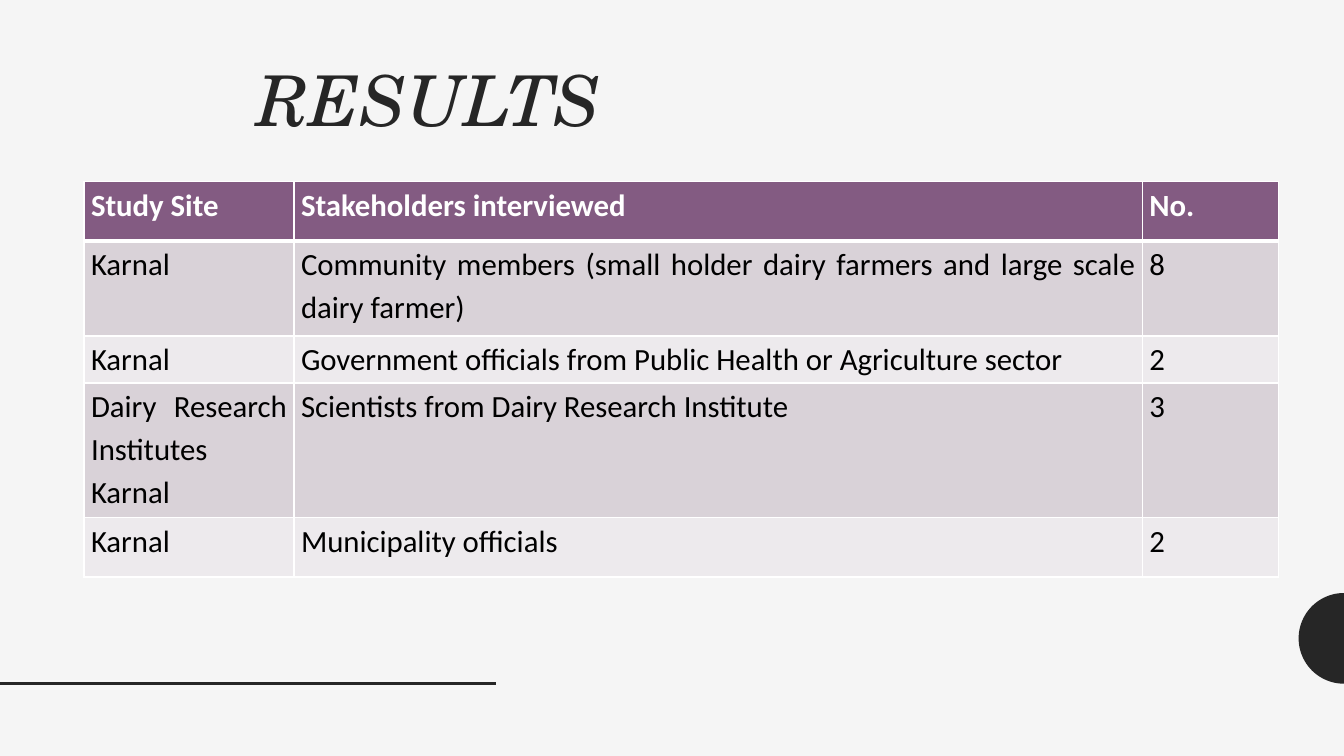
from math import cos, pi, sin

from lxml import etree
from pptx import Presentation
from pptx.dml.color import RGBColor
from pptx.enum.text import MSO_ANCHOR, PP_ALIGN
from pptx.oxml.ns import qn
from pptx.util import Inches, Pt

TOP = MSO_ANCHOR.TOP
RIGHT, JUSTIFY = PP_ALIGN.RIGHT, PP_ALIGN.JUSTIFY

PAPER = RGBColor(0xF5, 0xF5, 0xF5)
INK = RGBColor(0x26, 0x26, 0x26)
PLUM = RGBColor(0x83, 0x5B, 0x82)
MAUVE = RGBColor(0xD9, 0xD2, 0xD8)
MIST = RGBColor(0xED, 0xEA, 0xED)
WHITE = RGBColor(0xFF, 0xFF, 0xFF)
BLACK = RGBColor(0, 0, 0)

COLS, ROWS = 160, 90
UNIT = Inches(1) / 12

TITLE = dict(name="TeX Gyre Schola", size=Pt(50), italic=True, bold=False, color=INK)
HEAD = dict(name="Calibri", size=Pt(22), bold=True, color=WHITE)
BODY = {**HEAD, "bold": False, "color": BLACK}

COL_WIDTHS = [25, 101, 16.2]
ROW_HEIGHTS = [7.1, 11.3, 5.6, 16, 7.1]
INTERVIEWS = [
    ("Study Site", "Stakeholders interviewed", "No."),
    ("Karnal", "Community members (small holder dairy farmers and "
     "large scale dairy farmer)", "8"),
    ("Karnal", "Government officials from Public Health or Agriculture sector", "2"),
    ("Dairy Research Institutes Karnal", "Scientists from Dairy Research Institute", "3"),
    ("Karnal", "Municipality officials", "2"),
]


def grid(n):
    return round(n * UNIT)


class Deck:
    """Draws styled elements on the current slide, placed in grid columns and rows."""

    def __init__(self):
        self.prs = Presentation()
        self.prs.slide_width, self.prs.slide_height = grid(COLS), grid(ROWS)

    def new_slide(self):
        self.s = self.prs.slides.add_slide(self.prs.slide_layouts[5])
        fill = self.s.background.fill
        fill.solid()
        fill.fore_color.rgb = PAPER

    def text(self, tf, words, style, align, spacing):
        p = tf.paragraphs[0]
        p.alignment, p.line_spacing = align, spacing
        r = p.add_run()
        r.text = words
        for key, value in style.items():
            if key == "color":
                r.font.color.rgb = value
            else:
                setattr(r.font, key, value)

    def title(self, words, left, top, width, height):
        sp = self.s.shapes.title
        box = dict(left=left, top=top, width=width, height=height)
        for key, value in box.items():
            setattr(sp, key, grid(value))
        sp.text_frame.vertical_anchor = TOP
        self.text(sp.text_frame, words, TITLE, RIGHT, 0.9)

    def line(self, x1, x2, y):
        cx = self.s.shapes.add_connector(1, grid(x1), grid(y), grid(x2), grid(y))
        cx.line.color.rgb, cx.line.width = INK, Pt(2)
        etree.SubElement(cx._element.spPr, qn("a:effectLst"))

    def half_disc(self, x, y, radius, steps=48):
        arc = [(grid(x - radius * sin(pi * i / steps)),
                grid(y - radius * cos(pi * i / steps))) for i in range(steps + 1)]
        fb = self.s.shapes.build_freeform(*arc[0])
        fb.add_line_segments(arc[1:], close=True)
        sp = fb.convert_to_shape()
        sp.shadow.inherit = False
        sp.fill.solid()
        sp.fill.fore_color.rgb = INK
        sp.line.fill.background()

    def borders(self, cell, **widths):
        tc_pr = cell._tc.get_or_add_tcPr()
        for i, side in enumerate("LRTB"):
            ln = etree.Element(qn(f"a:ln{side}"), w=str(Pt(widths.get(side, 1))))
            fill = etree.SubElement(ln, qn("a:solidFill"))
            etree.SubElement(fill, qn("a:srgbClr"), val=str(WHITE))
            tc_pr.insert(i, ln)

    def table(self, data, left, top, widths, heights):
        tbl = self.s.shapes.add_table(
            len(data), len(widths), grid(left), grid(top),
            grid(sum(widths)), grid(sum(heights))).table
        for col, width in zip(tbl.columns, widths):
            col.width = grid(width)
        for i, (row, height) in enumerate(zip(data, heights)):
            tbl.rows[i].height = grid(height)
            for j, words in enumerate(row):
                cell = tbl.cell(i, j)
                cell.margin_left = cell.margin_right = Inches(0.07)
                cell.margin_top = cell.margin_bottom = 0
                cell.fill.solid()
                cell.fill.fore_color.rgb = PLUM if i == 0 else MAUVE if i % 2 else MIST
                self.borders(cell, T=3 if i == 1 else 1, B=3 if i == 0 else 1)
                self.text(cell.text_frame, words, BODY if i else HEAD, JUSTIFY, 1.15)


def main():
    deck = Deck()
    deck.new_slide()
    deck.half_disc(COLS, 76, 5.4)
    deck.line(0, 59, 81.4)
    deck.title("RESULTS", 10, 7.3, 62.8, 65)
    deck.table(INTERVIEWS, 10, 21.6, COL_WIDTHS, ROW_HEIGHTS)
    deck.prs.save("out.pptx")


if __name__ == "__main__":
    main()
